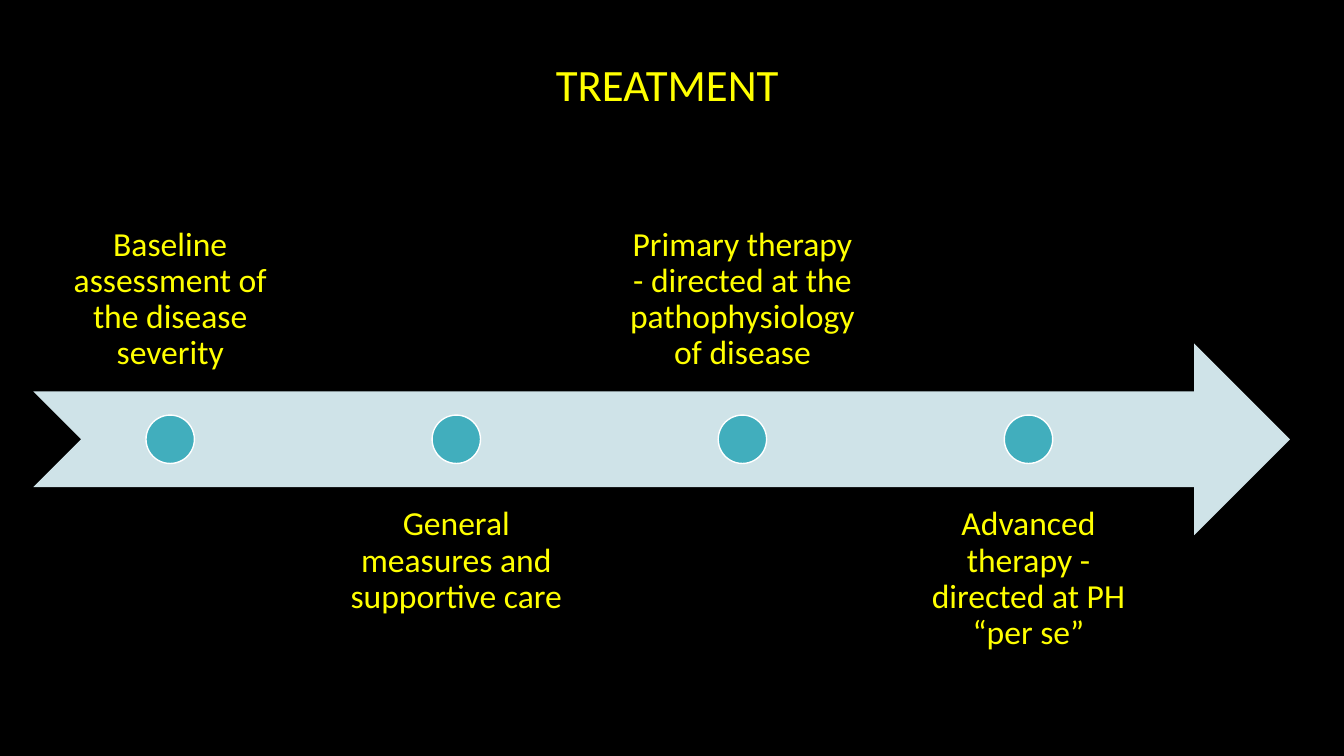
from pptx import Presentation
from pptx.dml.color import RGBColor
from pptx.enum.shapes import MSO_SHAPE
from pptx.enum.text import MSO_ANCHOR, PP_ALIGN
from pptx.util import Cm, Pt

ARROW, DOT = MSO_SHAPE.NOTCHED_RIGHT_ARROW, MSO_SHAPE.OVAL
TOP, MIDDLE, BOTTOM = MSO_ANCHOR.TOP, MSO_ANCHOR.MIDDLE, MSO_ANCHOR.BOTTOM
CENTER = PP_ALIGN.CENTER

COLORS = {"back": "000000", "text": "FFFF00", "arrow": "CFE3E8",
          "dot": "41AEBD", "edge": "FFFFFF"}
STEPS = [
    "Baseline assessment of the disease severity",
    "General measures and supportive care",
    "Primary therapy - directed at the pathophysiology of disease",
    "Advanced therapy - directed at PH “per se”",
]
LEFT, PITCH = 0.86, 7.21
WIDTH, HEIGHT = 6.86, 4.83
UPPER, LOWER = 5.03, 12.29
SIZE, MID = 1.22, 11.07  # dot diameter and arrow axis, in cm


def color(name):
    return RGBColor.from_string(COLORS[name])


def add_label(slide, text, box, size, anchor, inset):
    frame = slide.shapes.add_textbox(*map(Cm, box)).text_frame
    frame.word_wrap = True
    frame.vertical_anchor = anchor
    frame.margin_left = frame.margin_right = Cm(inset)
    frame.margin_top = frame.margin_bottom = Cm(inset)
    para = frame.paragraphs[0]
    para.text = text
    para.alignment = CENTER
    para.line_spacing = 0.9
    para.font.name = "Calibri"
    para.font.size = Pt(size)
    para.font.color.rgb = color("text")


def add_solid(slide, kind, box, fill, edge=None):
    shape = slide.shapes.add_shape(kind, *map(Cm, box))
    shape.shadow.inherit = False
    shape.fill.solid()
    shape.fill.fore_color.rgb = color(fill)
    if edge:
        shape.line.color.rgb = color(edge)
        shape.line.width = Pt(1)
    else:
        shape.line.fill.background()


def add_step(slide, index, text):
    """Add a dot on the arrow and its label, above and below in turn."""
    left = LEFT + index * PITCH
    top, anchor = (LOWER, TOP) if index % 2 else (UPPER, BOTTOM)
    add_label(slide, text, (left, top, WIDTH, HEIGHT), 24, anchor, 0.48)
    dot = (left + (WIDTH - SIZE) / 2, MID - SIZE / 2, SIZE, SIZE)
    add_solid(slide, DOT, dot, "dot", "edge")


def main():
    deck = Presentation()
    deck.slide_width, deck.slide_height = Cm(33.87), Cm(19.05)
    slide = deck.slides.add_slide(deck.slide_layouts[6])
    slide.background.fill.solid()
    slide.background.fill.fore_color.rgb = color("back")
    add_label(slide, "TREATMENT ", (2.34, 1.02, 29.21, 2.36), 32, MIDDLE, 0.2)
    add_solid(slide, ARROW, (0.84, MID - HEIGHT / 2, 31.67, HEIGHT), "arrow")
    for index, text in enumerate(STEPS):
        add_step(slide, index, text)
    deck.save("out.pptx")


if __name__ == "__main__":
    main()
